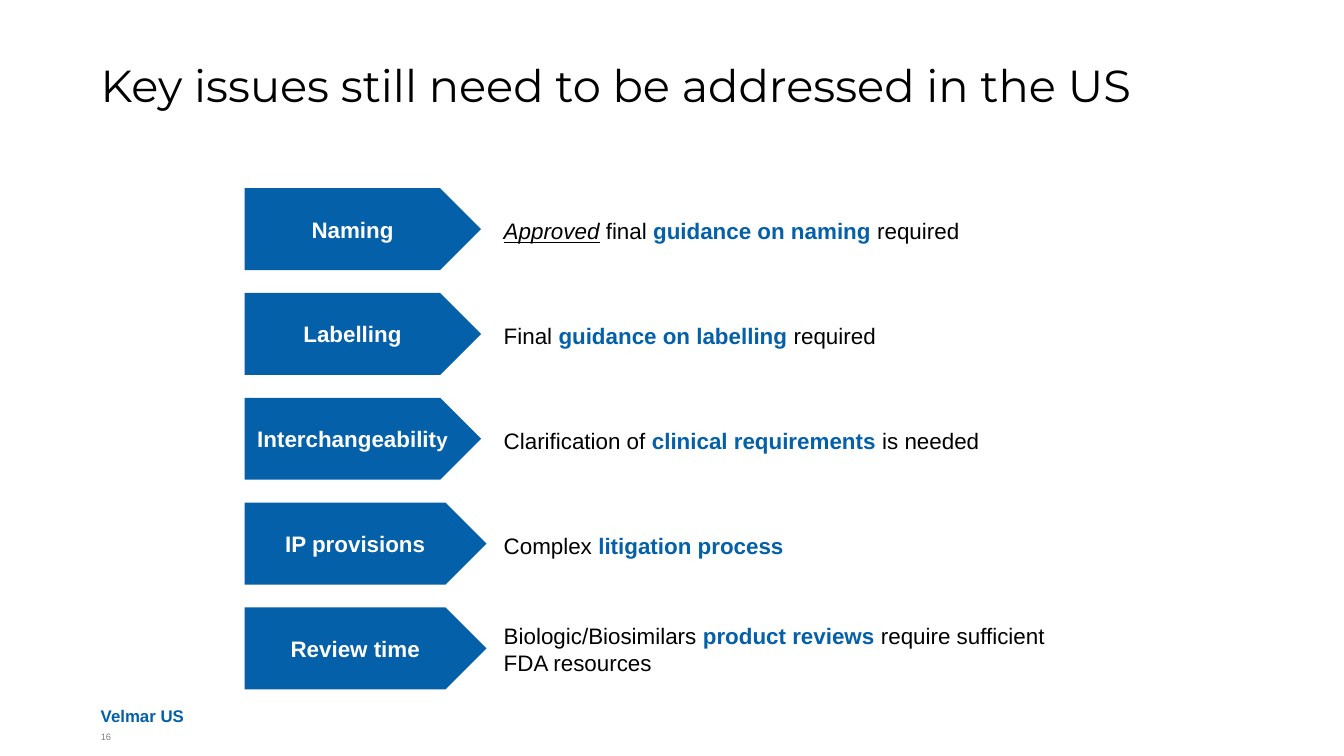
from pptx import Presentation
from pptx.dml.color import RGBColor
from pptx.enum.shapes import MSO_SHAPE
from pptx.enum.text import MSO_ANCHOR, PP_ALIGN
from pptx.util import Inches, Pt

BLUE, BLACK, WHITE, GREY = "0460A9", "000000", "FFFFFF", "7F7F7F"


def add_runs(frame, parts, size, font="Arial"):
    """Fill the first paragraph; parts are (text, colour, bold) tuples."""
    for text, hex_code, bold in parts:
        run = frame.paragraphs[0].add_run()
        run.text = text
        run.font.name, run.font.size, run.font.bold = font, Pt(size), bold
        run.font.color.rgb = RGBColor.from_string(hex_code)


def add_text(left, top, width, height, parts, size, font="Arial", inset=True):
    box = slide.shapes.add_textbox(Inches(left), Inches(top), Inches(width), Inches(height))
    frame = box.text_frame
    frame.word_wrap = True
    if not inset:
        frame.margin_left = frame.margin_right = 0
        frame.margin_top = frame.margin_bottom = 0
    add_runs(frame, parts, size, font)
    return frame


# Widescreen 16:9 slide
prs = Presentation()
prs.slide_width, prs.slide_height = Inches(10), Inches(10 * 9 / 16)
slide = prs.slides.add_slide(prs.slide_layouts[6])

# Title
title = add_text(0.75, 0.46, 8.56, 0.79,
                 [("Key issues still need to be addressed in the US", BLACK, False)],
                 24, "Montserrat", inset=False)
title.paragraphs[0].line_spacing = 0.95

# Issues: label, arrow width, explanation offset, width and height, explanation
issues = [
    ("Naming", 1.76, 0.17, 4.54, 0.3,
     [("Approved", BLACK, False), (" final ", BLACK, False),
      ("guidance on naming ", BLUE, True), ("required", BLACK, False)]),
    ("Labelling", 1.76, 0.17, 4.54, 0.3,
     [("Final ", BLACK, False), ("guidance on labelling ", BLUE, True),
      ("required", BLACK, False)]),
    ("Interchangeability", 1.76, 0.17, 3.77, 0.3,
     [("Clarification of ", BLACK, False), ("clinical requirements ", BLUE, True),
      ("is needed", BLACK, False)]),
    ("IP provisions", 1.8, 0.17, 4.54, 0.3,
     [("Complex ", BLACK, False), ("litigation process", BLUE, True)]),
    ("Review time", 1.8, 0.06, 4.54, 0.5,
     [("Biologic/Biosimilars ", BLACK, False), ("product reviews ", BLUE, True),
      ("require sufficient FDA resources", BLACK, False)]),
]
first_top, row_pitch, arrow_height = 1.4, 0.78, 0.61

for row, (label, arrow_width, offset, width, height, parts) in enumerate(issues):
    top = first_top + row * row_pitch

    # Arrow with the issue's name
    arrow = slide.shapes.add_shape(MSO_SHAPE.PENTAGON, Inches(1.82), Inches(top),
                                   Inches(arrow_width), Inches(arrow_height))
    arrow.shadow.inherit = False
    arrow.fill.solid()
    arrow.fill.fore_color.rgb = RGBColor.from_string(BLUE)
    arrow.line.fill.background()
    arrow.text_frame.word_wrap = False
    arrow.text_frame.vertical_anchor = MSO_ANCHOR.MIDDLE
    arrow.text_frame.paragraphs[0].alignment = PP_ALIGN.CENTER
    if label == "Interchangeability":
        # The last letter is slightly smaller
        add_runs(arrow.text_frame, [(label[:-1], WHITE, True)], 12)
        add_runs(arrow.text_frame, [(label[-1], WHITE, True)], 11)
    else:
        add_runs(arrow.text_frame, [(label, WHITE, True)], 12)

    # Explanation
    explanation = add_text(3.65, top + offset, width, height, parts, 12)
    if label == "Naming":
        approved = explanation.paragraphs[0].runs[0].font
        approved.italic = approved.underline = True

# Footer and page number
footer = add_text(0.75, 5.21, 6.5, 0.19, [("Velmar US", BLUE, True)], 9, inset=False)
footer.vertical_anchor = MSO_ANCHOR.BOTTOM
add_text(0.75, 5.44, 0.25, 0.19, [("16", GREY, False)], 5, inset=False)

prs.save("out.pptx")
